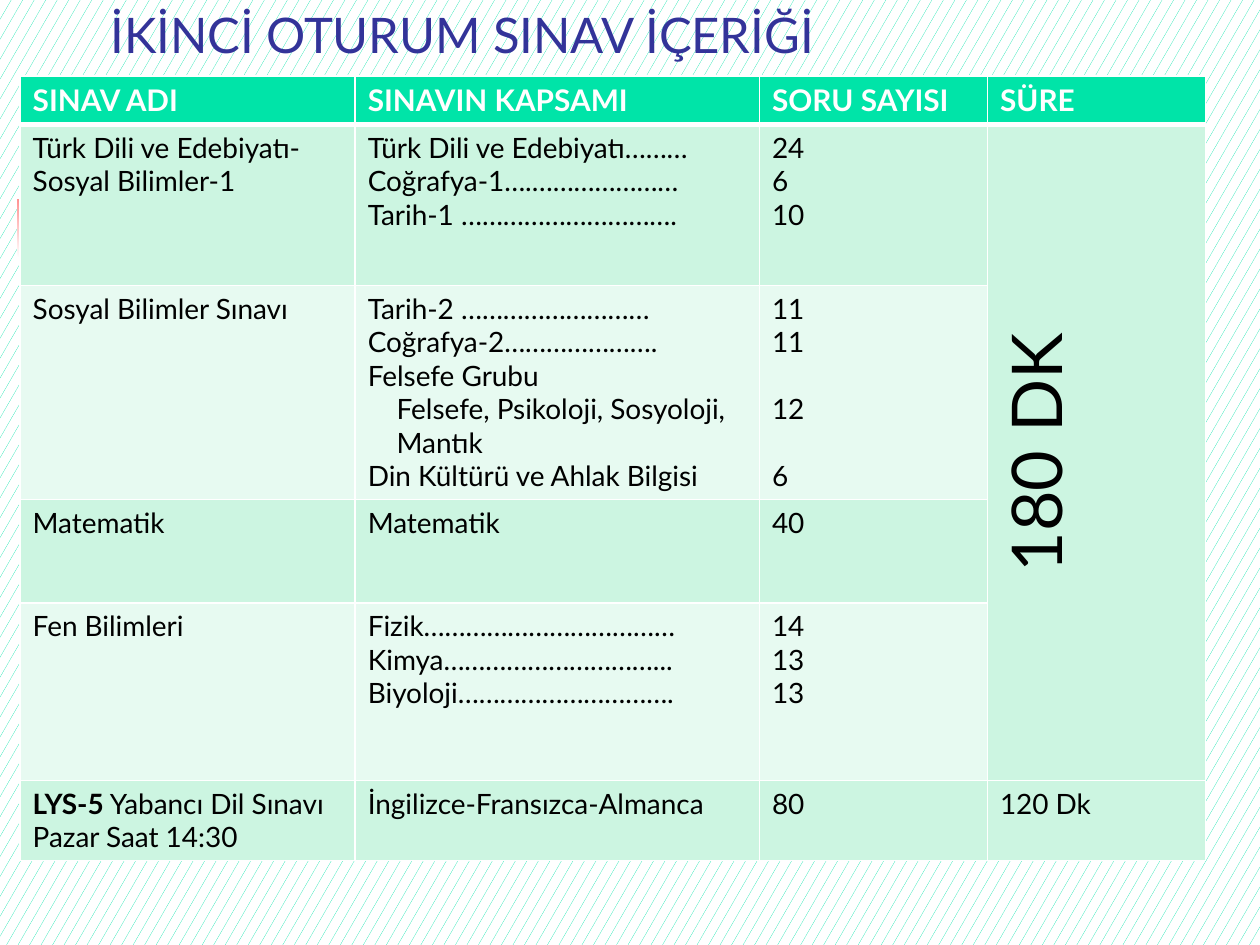
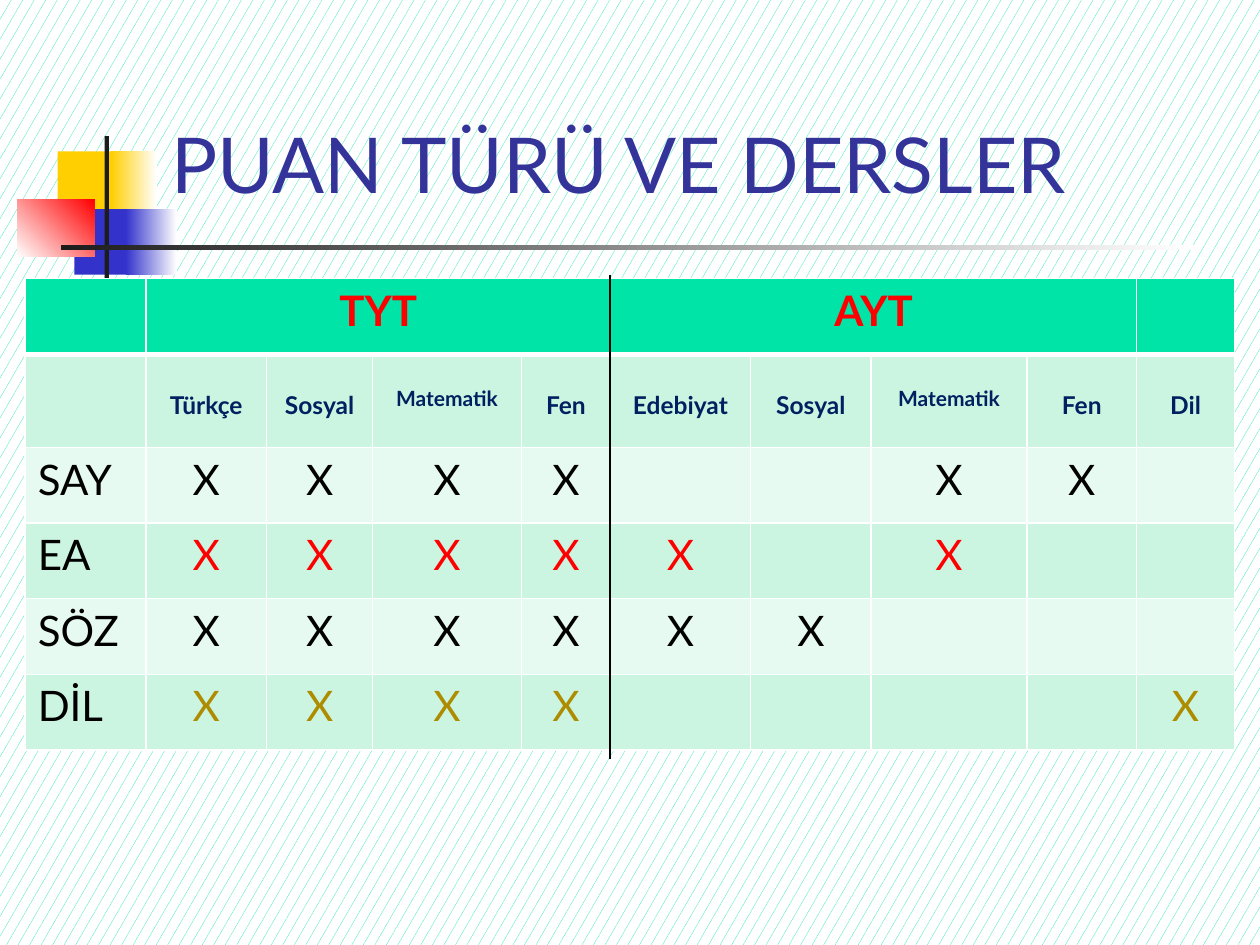
from dataclasses import dataclass

from lxml.etree import SubElement
from pptx import Presentation
from pptx.dml.color import RGBColor
from pptx.enum.dml import MSO_PATTERN
from pptx.enum.shapes import MSO_CONNECTOR, MSO_SHAPE
from pptx.enum.text import MSO_ANCHOR, PP_ALIGN
from pptx.oxml.ns import qn
from pptx.util import Pt

FONT = "Lato"
HUES = {
    "mint": "00E4A8", "pale": "CCF5E1", "light": "E7FAF1", "white": "FFFFFF",
    "black": "000000", "coal": "1C1C1C", "gold": "FFCF01", "blue": "3333CC",
    "red": "FF0000", "title": "333399", "navy": "002060", "ochre": "AD8C01",
}
LEAD = 19.2


@dataclass
class Line:
    """One line of cell text, with an optional bold start."""
    text: str
    bold: str = ""
    gap: float = 0
    dent: float = 0


DECOR = [
    (33, 86.5, 34.5, 37.5, "gold", None, 0),
    (63.5, 86.5, 26, 37.5, "gold", "white", 0),
    (42.5, 119.5, 33, 37.5, "blue", None, 0),
    (72, 119.5, 29, 37.5, "blue", "white", 0),
    (10, 113.8, 44, 33, "white", "red", 45),
    (59.8, 77.8, 2.5, 82.8, "coal", None, 0),
    (34.6, 140.3, 648, 2.5, "coal", "white", 0),
]

EXAMS = [
    (["Türk Dili ve Edebiyatı- Sosyal Bilimler-1"],
     ["Türk Dili ve Edebiyatı………", "Coğrafya-1….…………………", "Tarih-1 …………………………."],
     ["24", "6", "10"]),
    (["Sosyal Bilimler Sınavı"],
     ["Tarih-2 ………………………", "Coğrafya-2………………….", "Felsefe Grubu",
      Line("Felsefe, Psikoloji, Sosyoloji,", dent=16.5), Line("Mantık", dent=16.5),
      "Din Kültürü ve Ahlak Bilgisi"],
     ["11", "11", Line("12", gap=LEAD), Line("6", gap=LEAD)]),
    (["Matematik"], ["Matematik"], ["40"]),
    (["Fen Bilimleri"],
     ["Fizik………………………………", "Kimya…………………………...", "Biyoloji…………………………."],
     ["14", "13", "13"]),
    ([Line(" Yabancı Dil Sınavı", bold="LYS-5"), "Pazar Saat 14:30"],
     ["İngilizce-Fransızca-Almanca"], ["80"], ["120 Dk"]),
]

FIELDS = ["Türkçe", "Sosyal", "Matematik", "Fen", "Edebiyat", "Sosyal",
          "Matematik", "Fen", "Dil"]
SCORES = [
    ("SAY", "black", (1, 2, 3, 4, 7, 8)),
    ("EA", "red", (1, 2, 3, 4, 5, 7)),
    ("SÖZ", "black", (1, 2, 3, 4, 5, 6)),
    ("DİL", "ochre", (1, 2, 3, 4, 9)),
]


def tint(name):
    """Return the named colour."""
    return RGBColor.from_string(HUES[name])


def add_run(par, text, size, ink, bold=False):
    """Add one styled run to a paragraph."""
    run = par.add_run()
    run.text = text
    run.font.name = FONT
    run.font.size = Pt(size)
    run.font.bold = bold
    run.font.color.rgb = tint(ink)


def write(cell, lines, size, ink="black", bold=False, align=PP_ALIGN.LEFT):
    """Write lines into a cell, one paragraph each."""
    for num, line in enumerate(lines):
        if isinstance(line, str):
            line = Line(line)
        frame = cell.text_frame
        par = frame.add_paragraph() if num else frame.paragraphs[0]
        par.alignment = align
        if line.gap:
            par.space_before = Pt(line.gap)
        if line.dent:
            par._p.get_or_add_pPr().set("marL", str(Pt(line.dent)))
        if line.bold:
            add_run(par, line.bold, size, ink, True)
        add_run(par, line.text, size, ink, bold)


def add_edge(cell, side, width):
    """Add a white border to one side of a cell."""
    edge = SubElement(cell._tc.get_or_add_tcPr(), qn("a:ln" + side), w=str(Pt(width)))
    paint = SubElement(edge, qn("a:solidFill"))
    SubElement(paint, qn("a:srgbClr"), val=HUES["white"])


def add_grid(slide, left, top, cols, rows):
    """Add a banded table with white borders."""
    table = slide.shapes.add_table(len(rows), len(cols), Pt(left), Pt(top),
                                   Pt(sum(cols)), Pt(sum(rows))).table
    table.horz_banding = False
    for col, width in zip(table.columns, cols):
        col.width = Pt(width)
    for num, (row, height) in enumerate(zip(table.rows, rows)):
        row.height = Pt(height)
        for cell in row.cells:
            for side in "LRTB":
                thick = (num, side) in ((0, "B"), (1, "T"))
                add_edge(cell, side, 3 if thick else 1)
            cell.fill.solid()
            band = "pale" if num % 2 else "light"
            cell.fill.fore_color.rgb = tint(band if num else "mint")
    return table


def add_block(slide, left, top, width, height, start, end, angle):
    """Add a plain or fading block."""
    block = slide.shapes.add_shape(MSO_SHAPE.RECTANGLE, Pt(left), Pt(top),
                                   Pt(width), Pt(height))
    block.shadow.inherit = False
    block.line.fill.background()
    if end:
        block.fill.gradient()
        block.fill.gradient_angle = angle
        for stop, name in zip(block.fill.gradient_stops, (start, end)):
            stop.color.rgb = tint(name)
    else:
        block.fill.solid()
        block.fill.fore_color.rgb = tint(start)


def add_title(slide, text, left, top, height, size):
    """Add the slide title, resting on the foot of its box."""
    box = slide.shapes.add_textbox(Pt(left), Pt(top), Pt(613.5), Pt(height))
    frame = box.text_frame
    frame.word_wrap = True
    frame.vertical_anchor = MSO_ANCHOR.BOTTOM
    add_run(frame.paragraphs[0], text, size, "title")


def add_page(deck):
    """Add a slide with the shared ground and blocks."""
    slide = deck.slides.add_slide(deck.slide_layouts[6])
    ground = slide.background.fill
    ground.patterned()
    ground.pattern = MSO_PATTERN.SMALL_CONFETTI
    ground.fore_color.rgb = tint("mint")
    ground.back_color.rgb = tint("white")
    for part in DECOR:
        add_block(slide, *part)
    return slide


def add_rule(slide, left, top, foot):
    """Add a thin upright line."""
    rule = slide.shapes.add_connector(MSO_CONNECTOR.STRAIGHT, Pt(left), Pt(top),
                                      Pt(left), Pt(foot))
    rule.line.width = Pt(0.75)
    rule.line.color.rgb = tint("black")
    SubElement(rule._element.spPr, qn("a:effectLst"))


def exam_page(deck):
    """Build the slide on exam content."""
    slide = add_page(deck)
    add_title(slide, "İKİNCİ OTURUM SINAV İÇERİĞİ", 56, 0, 39.5, 28)
    table = add_grid(slide, 11.5, 43.5, (191.5, 231, 130.3, 124.7),
                     (27, 92, 122.4, 59, 101.5, 45.6))
    heads = ("SINAV ADI", "SINAVIN KAPSAMI", "SORU SAYISI", "SÜRE")
    for col, head in enumerate(heads):
        write(table.cell(0, col), [head], 17, "white", True)
    for row, exam in enumerate(EXAMS, 1):
        for col, lines in enumerate(exam):
            write(table.cell(row, col), lines, 16)
    time = table.cell(1, 3)
    time.merge(table.cell(4, 3))
    time._tc.get_or_add_tcPr().set("vert", "vert270")
    write(time, ["180 DK"], 40, align=PP_ALIGN.CENTER)


def score_page(deck):
    """Build the slide on score types."""
    slide = add_page(deck)
    add_title(slide, "PUAN TÜRÜ VE DERSLER", 90.7, 49, 74, 44)
    table = add_grid(slide, 14.4, 159.2,
                     (69, 69, 60.5, 85, 51, 80, 69, 89, 62.7, 56),
                     (43.2, 53.3) + (43.2,) * 4)
    mid = PP_ALIGN.CENTER
    for col, name in ((1, "TYT"), (5, "AYT")):
        head = table.cell(0, col)
        head.merge(table.cell(0, col + 3))
        write(head, [name], 24, "red", True, mid)
    for col, field in enumerate(FIELDS, 1):
        cell = table.cell(1, col)
        size = 12 if field == "Matematik" else 14
        cell.margin_top = Pt(3.6 + 1.2 * size)
        write(cell, [field], size, "navy", True, mid)
    for row, (name, ink, marks) in enumerate(SCORES, 2):
        write(table.cell(row, 0), [name], 24)
        for col in marks:
            write(table.cell(row, col), ["X"], 24, ink, align=mid)
    add_rule(slide, 348.5, 157, 434)


def main():
    """Build and save the deck."""
    deck = Presentation()
    deck.slide_width, deck.slide_height = Pt(720), Pt(540)
    exam_page(deck)
    score_page(deck)
    deck.save("out.pptx")


if __name__ == "__main__":
    main()
